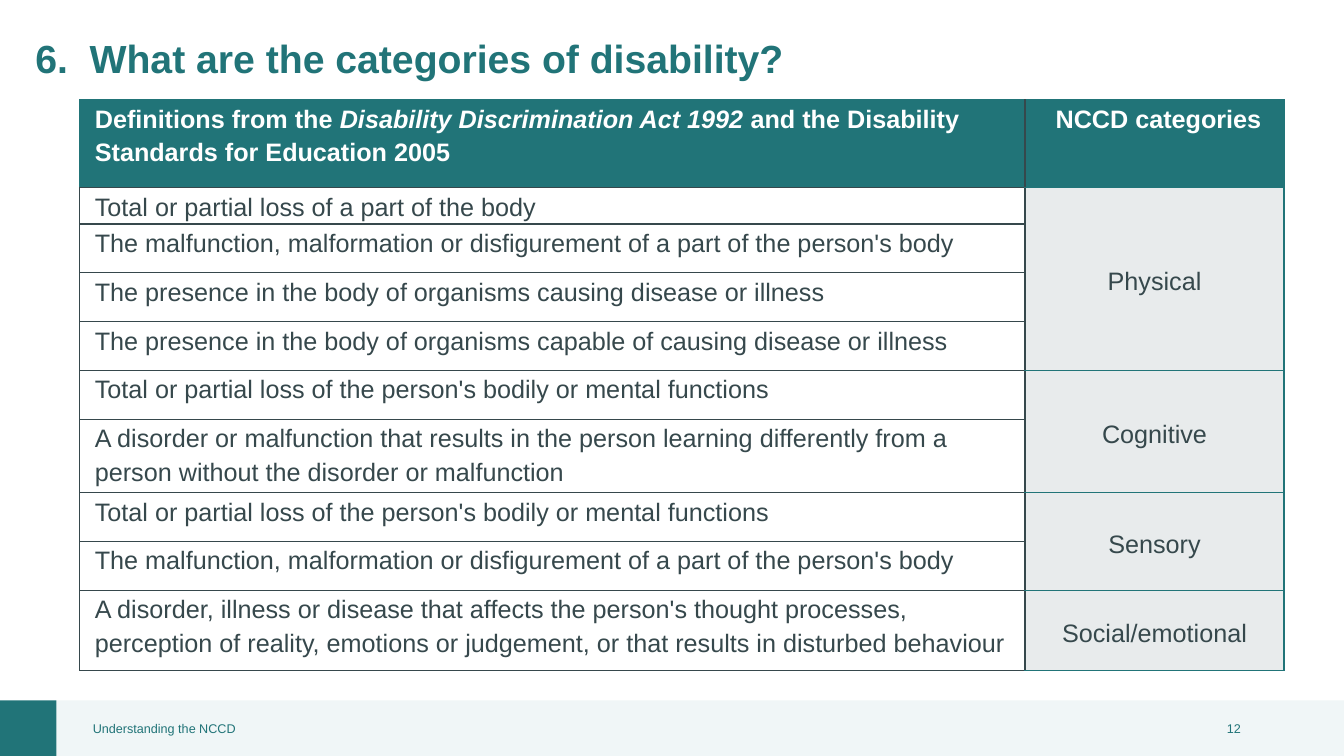
from dataclasses import dataclass

from lxml.etree import SubElement
from pptx import Presentation
from pptx.dml.color import RGBColor as RGB
from pptx.enum.shapes import MSO_SHAPE as Shape
from pptx.enum.text import MSO_ANCHOR as Anchor, PP_ALIGN as Align
from pptx.oxml.ns import qn
from pptx.util import Cm, Pt

TITLE = "6.  What are the categories of disability?"
FOOTER = "Understanding the NCCD"
PAGE = "12"
HEAD = (
    # (text, italic) runs
    [
        ("Definitions from the ", False),
        ("Disability Discrimination Act 1992 ", True),
        ("and the Disability Standards for Education 2005", False),
    ],
    [("NCCD categories", False)],
)
LOSS = "Total or partial loss of the person's bodily or mental functions"
FAULT = "The malfunction, malformation or disfigurement of a part of the person's body"
GROUPS = [
    # category, [(definition, row height in cm)]
    ("Physical", [
        ("Total or partial loss of a part of the body", 0.9),
        (FAULT, 1.23),
        ("The presence in the body of organisms causing disease or illness", 1.23),
        ("The presence in the body of organisms capable of causing disease or illness", 1.23),
    ]),
    ("Cognitive", [
        (LOSS, 1.23),
        ("A disorder or malfunction that results in the person learning differently "
         "from a person without the disorder or malfunction", 1.85),
    ]),
    ("Sensory", [(LOSS, 1.23), (FAULT, 1.23)]),
    ("Social/emotional", [
        ("A disorder, illness or disease that affects the person's thought processes, "
         "perception of reality, emotions or judgement, or that results in disturbed "
         "behaviour", 2.03),
    ]),
]


@dataclass(frozen=True)
class Theme:
    font: str = "Arial"
    teal: str = "217478"
    ink: str = "36484C"
    pale: str = "F0F6F7"
    grey: str = "E8EBEC"
    white: str = "FFFFFF"
    title: int = 28
    body: int = 18
    small: int = 9


T = Theme()
WIDE, HIGH = 33.87, 19.05
BAR, BLOCK = 1.4, 1.42
COLS = (23.82, 6.53)
LEFT, TOP, HEAD_H = 2.01, 2.51, 2.22


def style(para, size, color, bold=False, align=Align.LEFT):
    font = para.font
    font.name, font.size, font.bold = T.font, Pt(size), bold
    font.color.rgb = RGB.from_string(color)
    para.alignment = align


def add_rect(slide, left, width, color):
    rect = slide.shapes.add_shape(
        Shape.RECTANGLE, Cm(left), Cm(HIGH - BAR), Cm(width), Cm(BAR))
    rect.shadow.inherit = False
    rect.fill.solid()
    rect.fill.fore_color.rgb = RGB.from_string(color)
    rect.line.fill.background()


def add_text(slide, text, box, size, **look):
    frame = slide.shapes.add_textbox(*map(Cm, box)).text_frame
    frame.word_wrap = True
    frame.vertical_anchor = Anchor.MIDDLE
    para = frame.paragraphs[0]
    para.text = text
    style(para, size, T.teal, **look)
    return frame


def set_edges(cell, left, right, top, bottom):
    props = cell._tc.get_or_add_tcPr()
    for side, color in zip("LRTB", (left, right, top, bottom)):
        line = SubElement(props, qn(f"a:ln{side}"), w=str(Pt(1)))
        fill = SubElement(line, qn("a:solidFill"))
        SubElement(fill, qn("a:srgbClr"), val=color)


def fill_cell(cell, runs, back, color, before=6, indent=True, **look):
    cell.fill.solid()
    cell.fill.fore_color.rgb = RGB.from_string(back)
    cell.margin_left = cell.margin_right = Cm(0.18)
    cell.margin_top = cell.margin_bottom = 0
    para = cell.text_frame.paragraphs[0]
    for text, slant in runs:
        run = para.add_run()
        run.text = text
        if slant:
            run.font.italic = True
    style(para, T.body, color, **look)
    para.line_spacing = 1.2
    para.space_before, para.space_after = Pt(before), Pt(6)
    if indent:
        props = para._p.get_or_add_pPr()
        props.set("marL", str(Cm(0.2)))
        props.set("indent", "0")


def add_grid(slide):
    heights = [HEAD_H] + [high for _, defs in GROUPS for _, high in defs]
    table = slide.shapes.add_table(
        len(heights), len(COLS), Cm(LEFT), Cm(TOP),
        Cm(sum(COLS)), Cm(sum(heights))).table
    table.first_row = table.horz_banding = False
    for col, width in zip(table.columns, COLS):
        col.width = Cm(width)
    for row, high in zip(table.rows, heights):
        row.height = Cm(high)

    edges = ((T.teal, T.ink, T.teal, T.ink), (T.ink, T.teal, T.teal, T.teal))
    aligns = (Align.LEFT, Align.CENTER)
    for col, runs in enumerate(HEAD):
        cell = table.cell(0, col)
        set_edges(cell, *edges[col])
        fill_cell(cell, runs, T.teal, T.white, bold=True, align=aligns[col])

    row = 1
    for name, defs in GROUPS:
        first, last = row, row + len(defs) - 1
        for text, _ in defs:
            cell = table.cell(row, 0)
            set_edges(cell, *[T.ink] * 4)
            fill_cell(cell, [(text, False)], T.white, T.ink, before=10)
            set_edges(table.cell(row, 1), *edges[1])
            row += 1
        kind = table.cell(first, 1)
        if last > first:
            kind.merge(table.cell(last, 1))
        kind.vertical_anchor = Anchor.MIDDLE
        fill_cell(kind, [(name, False)], T.grey, T.ink,
                  indent=False, align=Align.CENTER)


def main():
    deck = Presentation()
    deck.slide_width, deck.slide_height = Cm(WIDE), Cm(HIGH)
    slide = deck.slides.add_slide(deck.slide_layouts[6])
    add_rect(slide, BLOCK, WIDE - BLOCK, T.pale)
    add_rect(slide, 0, BLOCK, T.teal)
    title = add_text(slide, TITLE, (0.64, -0.3, 30.91, 3.68), T.title, bold=True)
    title.paragraphs[0].line_spacing = 0.9
    foot = add_text(slide, FOOTER, (2.34, HIGH - BAR, 11.71, BAR), T.small)
    foot.margin_left = 0
    add_text(slide, PAGE, (29.01, HIGH - BAR, 2.51, BAR), T.small, align=Align.RIGHT)
    add_grid(slide)
    deck.save("out.pptx")


if __name__ == "__main__":
    main()
